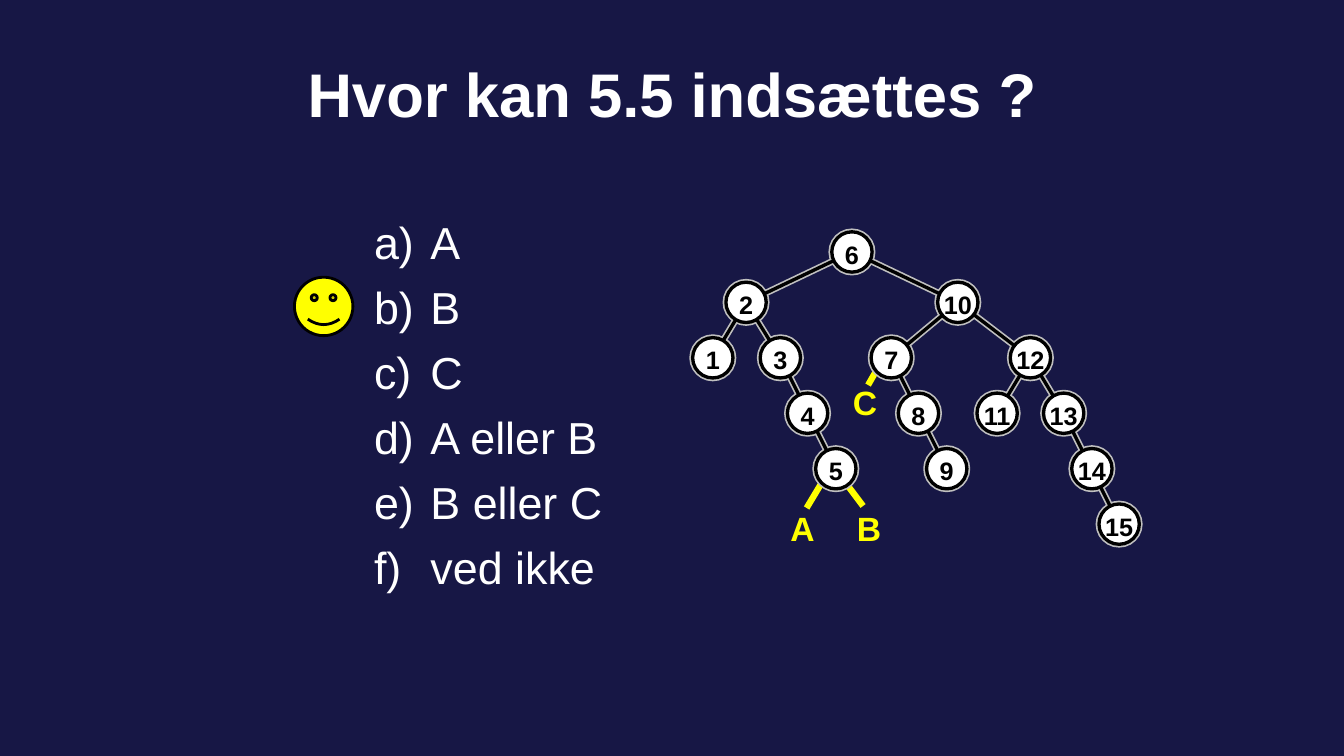
from lxml import etree
from pptx import Presentation
from pptx.dml.color import RGBColor
from pptx.enum.shapes import MSO_CONNECTOR, MSO_SHAPE
from pptx.enum.text import MSO_ANCHOR, MSO_AUTO_SIZE, PP_ALIGN
from pptx.oxml.ns import qn
from pptx.util import Pt

PX = 9144
FONT = "Arial"
NAVY = RGBColor(0x17, 0x17, 0x45)
WHITE = RGBColor(0xFF, 0xFF, 0xFF)
BLACK = RGBColor(0, 0, 0)
YELLOW = RGBColor(0xFF, 0xFF, 0)
SILVER = RGBColor(0xC0, 0xC0, 0xC0)
OVAL = MSO_SHAPE.OVAL
SMILEY = MSO_SHAPE.SMILEY_FACE
STRAIGHT = MSO_CONNECTOR.STRAIGHT
CENTER = PP_ALIGN.CENTER
TOP, MIDDLE = MSO_ANCHOR.TOP, MSO_ANCHOR.MIDDLE
NO_FIT = MSO_AUTO_SIZE.NONE

NODE_SIZE = 40
HALO_WIDTH, EDGE_WIDTH, MARK_WIDTH = 4.75, 2.38, 4.5
LEVELS = [250, 300, 355, 410, 465, 520]
NODES = {
    6: (845, 0), 2: (740, 1), 10: (950, 1),
    1: (707, 2), 3: (774, 2), 7: (884, 2), 12: (1022, 2),
    4: (801, 3), 8: (911, 3), 11: (989, 3), 13: (1055, 3),
    5: (829, 4), 9: (939, 4), 14: (1083, 4), 15: (1110, 5),
}
EDGES = [(6, 2), (6, 10), (2, 1), (2, 3), (3, 5), (10, 7),
         (10, 12), (7, 9), (12, 11), (12, 13), (13, 15)]
CHOICES = ["A", "B", "C", "A eller B", "B eller C", "ved ikke"]
GAPS = [
    ("A", (767, 499), (815, 479), (800, 504)),
    ("B", (833, 499), (838, 478), (856, 502)),
    ("C", (829, 374), (869, 368), (861, 382)),
]


class Slide:
    def __init__(self, prs):
        self.s = prs.slides.add_slide(prs.slide_layouts[1])
        fill = self.s.background.fill
        fill.solid()
        fill.fore_color.rgb = NAVY

    def place(self, sp, x, y, w, h):
        sp.left, sp.top, sp.width, sp.height = [v * PX for v in (x, y, w, h)]

    def run(self, p, text, size, color, bold=False):
        r = p.add_run()
        r.text = text
        r.font.name = FONT
        r.font.size = Pt(size)
        r.font.bold = bold
        r.font.color.rgb = color

    def title(self, text, *box):
        sp = self.s.shapes.title
        self.place(sp, *box)
        tf = sp.text_frame
        tf.auto_size = NO_FIT
        tf.vertical_anchor = MIDDLE
        p = tf.paragraphs[0]
        p.alignment = CENTER
        self.run(p, text, 44, WHITE, True)

    def choices(self, items, *box):
        sp = self.s.placeholders[1]
        self.place(sp, *box)
        tf = sp.text_frame
        tf.auto_size = NO_FIT
        tf.vertical_anchor = TOP
        for i, item in enumerate(items):
            p = tf.add_paragraph() if i else tf.paragraphs[0]
            p.space_before = Pt(8)
            pPr = p._p.get_or_add_pPr()
            pPr.set("marL", str(56 * PX))
            pPr.set("indent", str(-56 * PX))
            bullet_font = etree.SubElement(pPr, qn("a:buFont"))
            bullet_font.set("typeface", FONT)
            etree.SubElement(pPr, qn("a:buAutoNum")).set("type", "alphaLcParenR")
            self.run(p, item, 32, WHITE)

    def label(self, text, x, y):
        sp = self.s.shapes.add_textbox(x * PX, y * PX, 58 * PX, 51 * PX)
        tf = sp.text_frame
        tf.word_wrap = True
        p = tf.paragraphs[0]
        p.alignment = CENTER
        self.run(p, text, 24, YELLOW, True)

    def line(self, start, end, color, width):
        c = self.s.shapes.add_connector(STRAIGHT, *[v * PX for v in (*start, *end)])
        c.line.color.rgb = color
        c.line.width = Pt(width)
        etree.SubElement(c._element.spPr, qn("a:effectLst"))

    def shape(self, kind, x, y, size, fill, color, width):
        sp = self.s.shapes.add_shape(kind, *[v * PX for v in (x, y, size, size)])
        sp.shadow.inherit = False
        sp.fill.solid()
        sp.fill.fore_color.rgb = fill
        sp.line.color.rgb = color
        sp.line.width = Pt(width)
        return sp

    def circle(self, center, fill, color, width):
        x, y = [v - NODE_SIZE // 2 for v in center]
        return self.shape(OVAL, x, y, NODE_SIZE, fill, color, width)

    def node(self, key, center):
        tf = self.circle(center, WHITE, BLACK, EDGE_WIDTH).text_frame
        tf.margin_left = tf.margin_right = tf.margin_bottom = 0
        tf.margin_top = 4 * PX
        tf.word_wrap = False
        tf.vertical_anchor = MIDDLE
        p = tf.paragraphs[0]
        p.alignment = CENTER
        self.run(p, str(key), 18, BLACK, True)


def main():
    prs = Presentation()
    prs.slide_width, prs.slide_height = 1333 * PX, 750 * PX
    slide = Slide(prs)
    slide.choices(CHOICES, 361, 208, 389, 475)
    slide.title("Hvor kan 5.5 indsættes ?", 167, 30, 1000, 125)
    for text, corner, start, end in GAPS:
        slide.label(text, *corner)
        slide.line(start, end, YELLOW, MARK_WIDTH)
    slide.shape(SMILEY, 292, 275, 58, YELLOW, BLACK, 2)

    centers = {key: (x, LEVELS[level]) for key, (x, level) in NODES.items()}
    for center in centers.values():
        slide.circle(center, SILVER, SILVER, HALO_WIDTH)
    for color, width in ((SILVER, HALO_WIDTH), (BLACK, EDGE_WIDTH)):
        for parent, child in EDGES:
            slide.line(centers[parent], centers[child], color, width)
    for key, center in centers.items():
        slide.node(key, center)
    prs.save("out.pptx")


if __name__ == "__main__":
    main()
